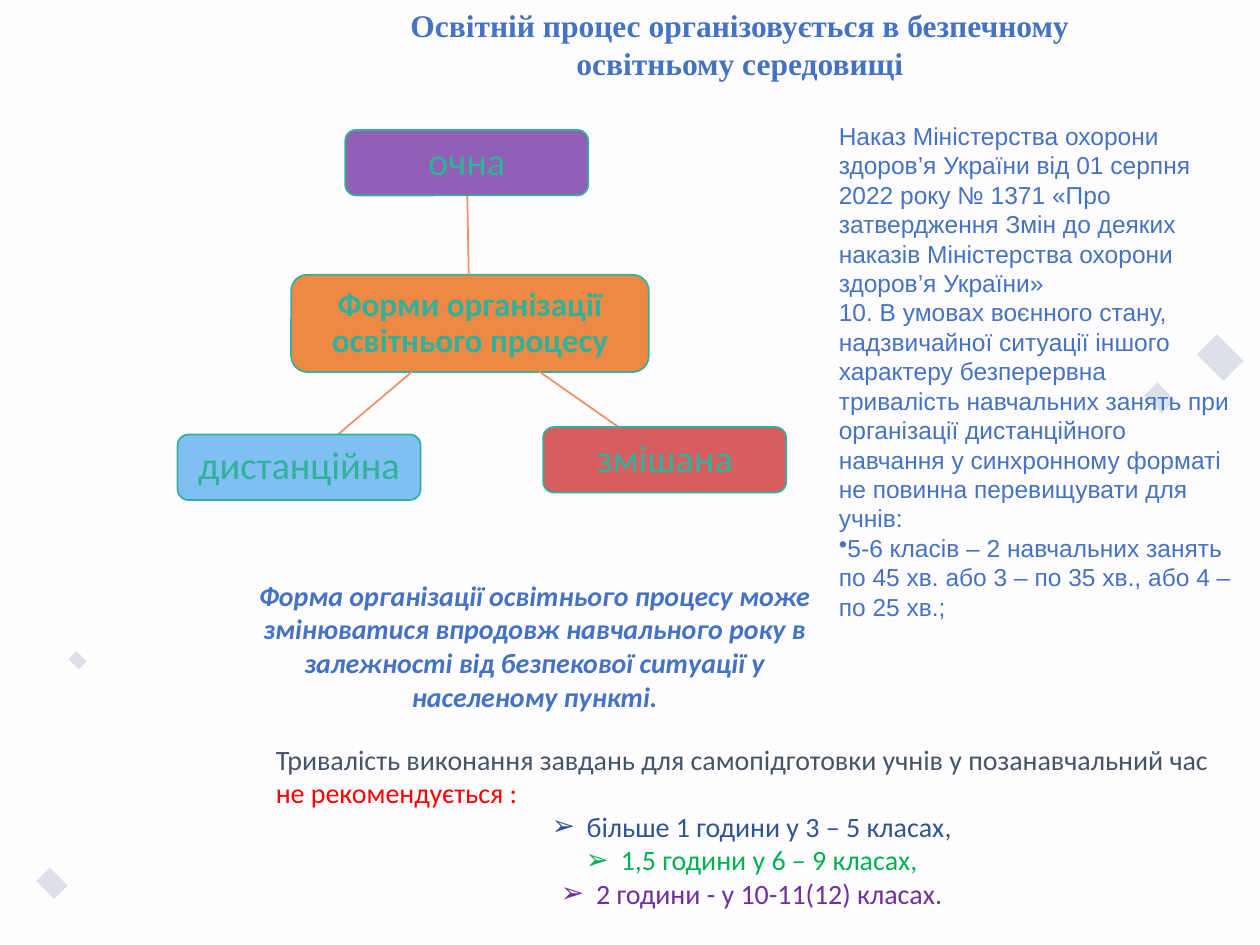
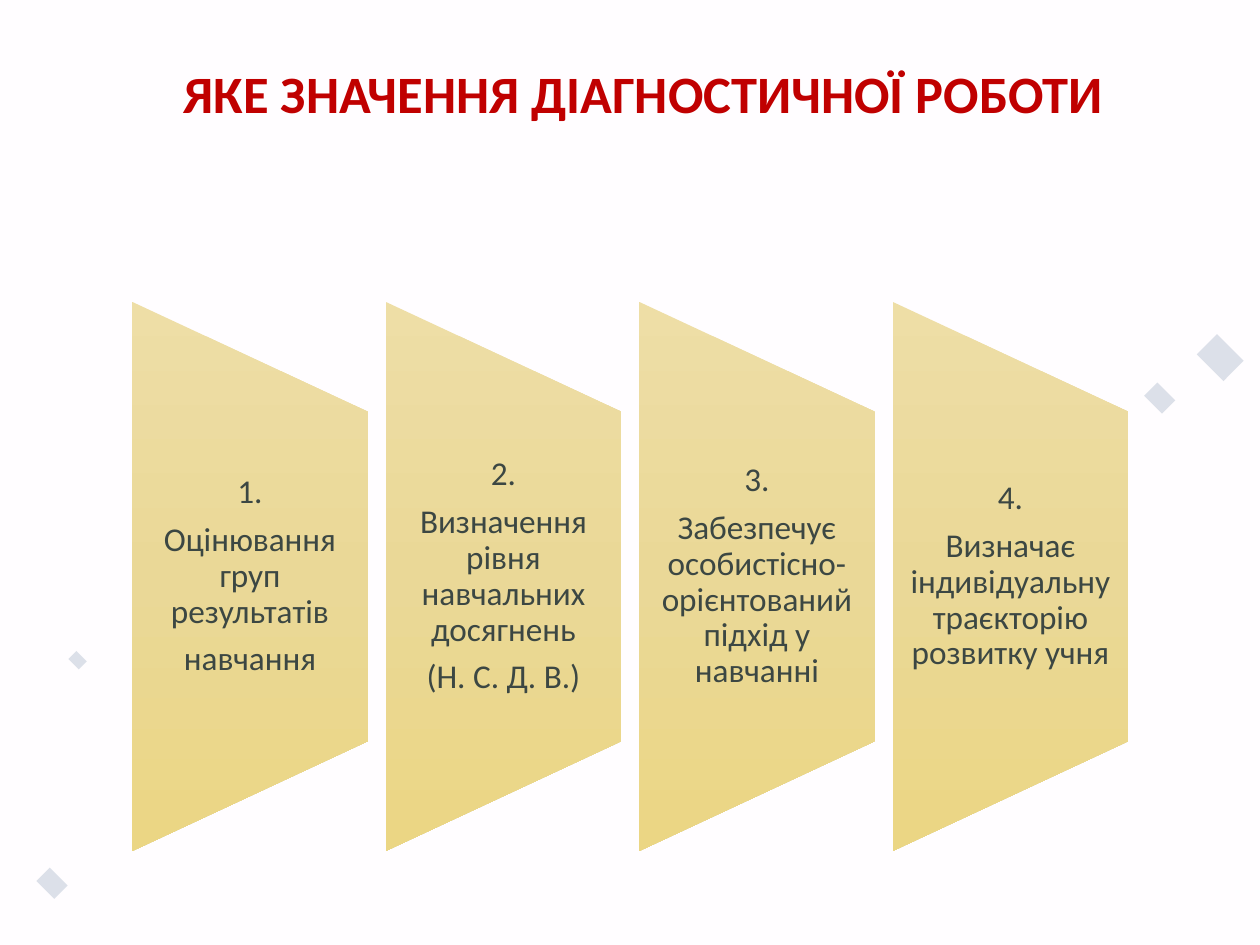
import copy

import pptx
import pptx.dml.color
import pptx.enum.shapes
import pptx.enum.text
import pptx.oxml.ns
import pptx.util
from lxml import etree

Cm, Pt = pptx.util.Cm, pptx.util.Pt
SHAPE = pptx.enum.shapes.MSO_SHAPE
ANCHOR = pptx.enum.text.MSO_ANCHOR
CENTER = pptx.enum.text.PP_ALIGN.CENTER
qn = pptx.oxml.ns.qn

COLORS = {
    "background": "FFFDFF", "ornament": "8497B0", "blue": "4472C4",
    "teal": "30B29A", "spoke": "EF9166", "orange": "ED7D31",
    "purple": "7030A0", "crimson": "C00000", "sky": "0083E6",
    "slate": "445469", "red": "FF0000", "navy": "2F5597",
    "green": "00B050", "panel text": "3C4743",
    "panel top": "EEDEA6", "panel middle": "EAD897", "panel bottom": "EBD684",
}


def rgb(name):
    return pptx.dml.color.RGBColor.from_string(COLORS[name])


def cm(*lengths):
    return [Cm(length) for length in lengths]


class Deck:
    """Holds the shared style and the slide being built."""

    # box, rotation, opacity, arc (start degrees, end degrees, thickness)
    ORNAMENTS = [
        ((19, -3.96, 11.61, 8.71), 225, 29, (121.76, 191.51, 0.14)),
        ((24.31, 6.83, 0.58, 0.76), 315, 28, None),
        ((-7.14, 12.24, 8.71, 11.61), 42.5, 29, (156.23, 179.91, 0.08)),
        ((23.19, 7.77, 0.38, 0.51), 315, 28, None),
        ((0.86, 17.55, 0.38, 0.51), 315, 28, None),
        ((1.45, 13.16, 0.23, 0.3), 315, 28, None),
    ]

    def __init__(self):
        self.show = pptx.Presentation()
        self.show.slide_width, self.show.slide_height = cm(25.4, 19.05)
        fill = self.show.slide_master.background.fill
        fill.solid()
        fill.fore_color.rgb = rgb("background")
        self.slide = None

    def new_slide(self, layout):
        self.slide = self.show.slides.add_slide(self.show.slide_layouts[layout])
        for depth, (box, rotation, opacity, arc) in enumerate(self.ORNAMENTS, 2):
            kind = SHAPE.BLOCK_ARC if arc else SHAPE.RECTANGLE
            ornament = self.shape(kind, box, "ornament", opacity)
            ornament.rotation = rotation
            if arc:
                start, end, thickness = arc
                # One degree is 60000 units; adjustments count in 100000
                for i, value in enumerate((start * 0.6, end * 0.6, thickness)):
                    ornament.adjustments[i] = value
            self.slide.shapes._spTree.insert(depth, ornament._element)

    def shape(self, kind, box, color=None, opacity=100, outline=None):
        shape = self.slide.shapes.add_shape(kind, *cm(*box))
        shape.shadow.inherit = False
        if color:
            shape.fill.solid()
            shape.fill.fore_color.rgb = rgb(color)
            tint = shape._element.spPr.find(".//" + qn("a:srgbClr"))
            etree.SubElement(tint, qn("a:alpha"), val=str(opacity * 1000))
        if outline:
            shape.line.color.rgb = rgb(outline)
            shape.line.width = Pt(1)
        else:
            shape.line.fill.background()
        return shape

    def form(self, label, box, color, opacity, size=22, bold=None):
        form = self.shape(SHAPE.ROUNDED_RECTANGLE, box, color, opacity, "teal")
        self.set_text(form.text_frame, [label], size, "teal", bold=bold, align=CENTER,
                      spacing=0.9, anchor=ANCHOR.MIDDLE, inset=(0.2, 0.2))

    def spoke(self, start, end):
        spoke = self.slide.shapes.add_connector(
            pptx.enum.shapes.MSO_CONNECTOR.STRAIGHT, *cm(*start, *end))
        spoke.line.color.rgb = rgb("spoke")
        spoke.line.width = Pt(1)
        etree.SubElement(spoke._element.spPr, qn("a:effectLst"))

    def panel(self, center, middle, paragraphs):
        length, width, text_height = 11.07, 4.75, 6.65
        panel = self.shape(SHAPE.FLOWCHART_MANUAL_OPERATION,
                           (center - length / 2, middle - width / 2, length, width))
        panel.rotation = 270
        panel.fill.gradient()
        panel.fill.gradient_angle = 270
        gradient = panel._element.spPr.find(qn("a:gradFill"))
        gradient.set("rotWithShape", "0")
        stops = gradient.find(qn("a:gsLst"))
        stops.insert(1, copy.deepcopy(stops[0]))
        for i, part in enumerate(("top", "middle", "bottom")):
            stop = panel.fill.gradient_stops[i]
            stop.position = i / 2
            stop.color.rgb = rgb("panel " + part)
        self.text((center - width / 2, middle - text_height / 2, width, text_height),
                  paragraphs, 19, "panel text", align=CENTER, spacing=0.9,
                  after=6.8, anchor=ANCHOR.MIDDLE, inset=(0.33, 0))

    def text(self, box, paragraphs, size, color, **style):
        frame = self.slide.shapes.add_textbox(*cm(*box)).text_frame
        self.set_text(frame, paragraphs, size, color, **style)
        return frame

    def fill_placeholder(self, index, box, paragraphs, size, color, **style):
        holder = self.slide.placeholders[index]
        holder.left, holder.top, holder.width, holder.height = cm(*box)
        self.set_text(holder.text_frame, paragraphs, size, color, **style)
        return holder.text_frame

    def bullet(self, paragraph, mark=None, indent=0):
        props = paragraph._p.get_or_add_pPr()
        props.set("marL", str(Cm(indent)))
        props.set("indent", str(-Cm(indent)))
        # Bullets come before the default run properties
        defaults = props.find(qn("a:defRPr"))
        element = etree.Element(qn("a:buChar" if mark else "a:buNone"))
        if mark:
            element.set("char", mark)
        defaults.addprevious(element)

    def set_text(self, frame, paragraphs, size, color, font="Calibri", bold=None,
                 italic=None, align=None, spacing=1.0, after=0,
                 anchor=ANCHOR.TOP, inset=(0.25, 0.13)):
        """Each paragraph is a string or a list of (text, color) runs."""
        frame.word_wrap = True
        frame.auto_size = pptx.enum.text.MSO_AUTO_SIZE.NONE
        frame.vertical_anchor = anchor
        frame.margin_left = frame.margin_right = Cm(inset[0])
        frame.margin_top = frame.margin_bottom = Cm(inset[1])
        for i, content in enumerate(paragraphs):
            paragraph = frame.add_paragraph() if i else frame.paragraphs[0]
            paragraph.alignment = align
            paragraph.line_spacing = spacing
            paragraph.space_before, paragraph.space_after = Pt(0), Pt(after)
            style = paragraph.font
            style.name, style.size = font, Pt(size)
            style.bold, style.italic = bold, italic
            style.color.rgb = rgb(color)
            runs = [(content, None)] if isinstance(content, str) else content
            for words, run_color in runs:
                run = paragraph.add_run()
                run.text = words
                if run_color:
                    run.font.color.rgb = rgb(run_color)


def build_forms_slide(deck):
    deck.new_slide(1)
    deck.fill_placeholder(
        0, (5.11, 0, 19.61, 2.31),
        ["Освітній процес організовується в безпечному", "освітньому середовищі"],
        18, "blue", font="Times New Roman", bold=True, align=CENTER)

    # Forms of learning around their common heading
    deck.form("Форми організації освітнього процесу", (5.87, 5.54, 7.21, 1.96),
              "orange", 90, size=19, bold=True)
    for label, left, top, color, opacity, start, end in (
            ("очна", 6.96, 2.62, "purple", 77, (9.45, 5.54), (9.42, 3.94)),
            ("змішана", 10.95, 8.61, "crimson", 63, (10.87, 7.49), (12.47, 8.61)),
            ("дистанційна", 3.58, 8.76, "sky", 50, (8.31, 7.49), (6.81, 8.76))):
        deck.spoke(start, end)
        deck.form(label, (left, top, 4.9, 1.32), color, opacity)

    # Ministry order
    order = deck.text((16.66, 2.31, 8.46, 9.83), [
        "Наказ Міністерства охорони здоров’я України від 01 серпня 2022 року № 1371 "
        "«Про затвердження Змін до деяких наказів Міністерства охорони здоров’я України»",
        "10. В умовах воєнного стану, надзвичайної ситуації іншого характеру "
        "безперервна тривалість навчальних занять при організації дистанційного "
        "навчання у синхронному форматі не повинна перевищувати для учнів:",
        "5-6 класів – 2 навчальних занять по 45 хв. або 3 – по 35 хв., "
        "або 4 – по 25 хв.;",
    ], 14, "blue", font="Arial")
    deck.bullet(order.paragraphs[-1], "•")

    # Remark on changing the form
    deck.text((4.9, 11.53, 11.76, 3), [
        "Форма організації освітнього процесу може змінюватися впродовж навчального "
        "року в залежності від безпекової ситуації у населеному пункті.",
    ], 16, "blue", bold=True, italic=True, align=CENTER)

    # Limits on homework time
    limits = deck.fill_placeholder(1, (5.31, 14.83, 19.81, 3.68), [
        [("Тривалість виконання завдань для самопідготовки учнів у позанавчальний час ",
          None), ("не рекомендується :", "red")],
        [("більше 1 години у 3 – 5 класах", "navy"), (", ", None)],
        [("1,5 години у 6 – 9 класах, ", "green")],
        [("2 години - у 10-11(12) класах", "purple"), (". ", None)],
    ], 16, "slate")
    heading, *items = limits.paragraphs
    deck.bullet(heading)
    for item in items:
        item.alignment = CENTER
        deck.bullet(item, "➢", 0.71)


def build_diagnostics_slide(deck):
    deck.new_slide(5)
    deck.fill_placeholder(0, (3.1, 0.76, 19.76, 2.36),
                          ["ЯКЕ ЗНАЧЕННЯ ДІАГНОСТИЧНОЇ РОБОТИ"], 30, "crimson",
                          bold=True, align=CENTER, spacing=0.9, anchor=ANCHOR.MIDDLE)

    # Four numbered panels at an equal pitch
    purposes = [
        ["Оцінювання груп результатів", "навчання"],
        ["Визначення рівня навчальних досягнень", "(Н. С. Д. В.)"],
        ["Забезпечує особистісно-орієнтований підхід у навчанні"],
        ["Визначає індивідуальну траєкторію розвитку учня"],
    ]
    for i, purpose in enumerate(purposes):
        deck.panel(5.04 + 5.11 * i, 11.62, [f"{i + 1}."] + purpose)


def main():
    deck = Deck()
    build_forms_slide(deck)
    build_diagnostics_slide(deck)
    deck.show.save("out.pptx")


if __name__ == "__main__":
    main()
